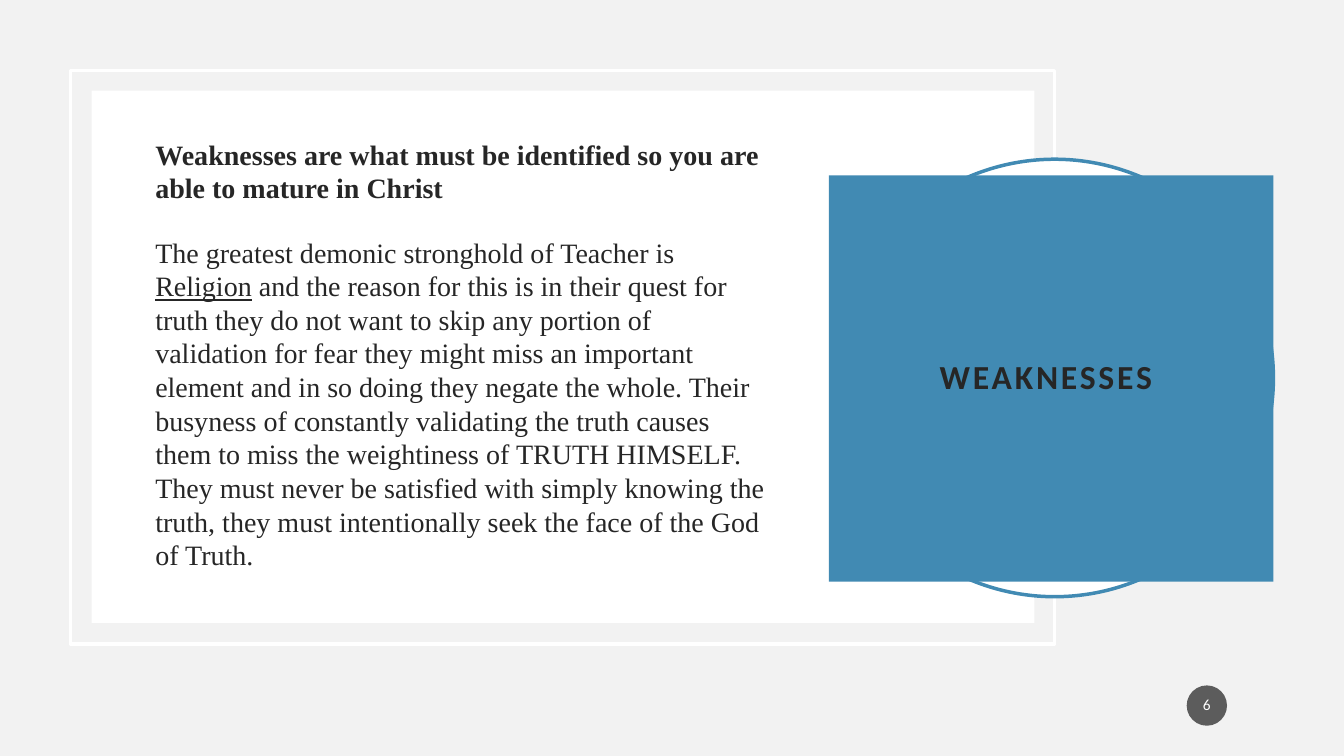
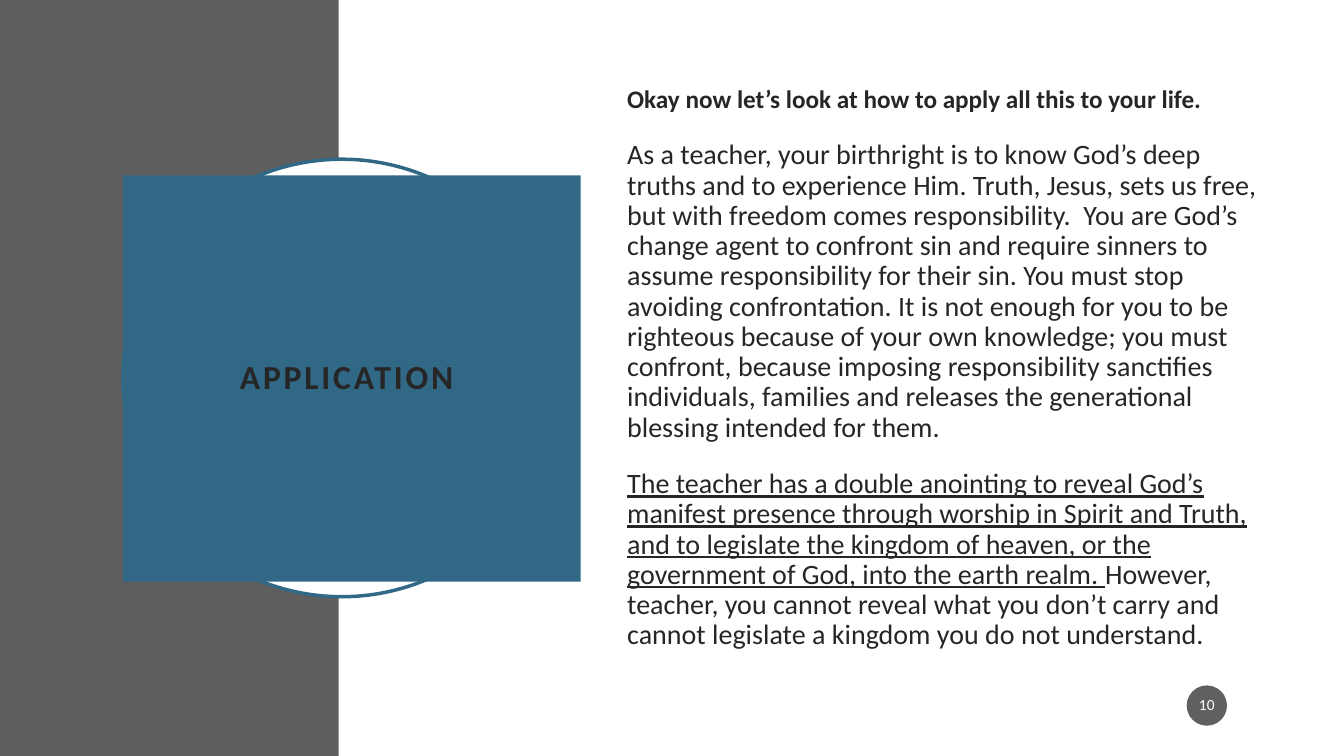
from pptx import Presentation
from pptx.dml.color import RGBColor
from pptx.enum import shapes, text
from pptx.oxml.ns import qn
from pptx.util import Inches, Pt

WHITE = RGBColor(0xFF, 0xFF, 0xFF)
PALE = RGBColor(0xF2, 0xF2, 0xF2)
GREY = RGBColor(0x5E, 0x5E, 0x5E)
DARK = RGBColor(0x1D, 0x1D, 0x1D)
INK = RGBColor(0x26, 0x26, 0x26)
BLUE = RGBColor(0x41, 0x8A, 0xB3)
NAVY = RGBColor(0x31, 0x68, 0x86)
RECT = shapes.MSO_SHAPE.RECTANGLE
OVAL = shapes.MSO_SHAPE.OVAL

# Content: panels are (box, fill, line); paragraphs are (size, runs);
# runs are (words, style), where b is bold and u is underlined
SLIDES = [
    dict(
        title="WEAKNESSES ", page="6", back=PALE, tone=BLUE,
        panels=[((0.7, 0.7, 9.76, 5.69), None, WHITE),
                ((0.91, 0.9, 9.35, 5.28), WHITE, None)],
        ring=8.29, head=(8.22, 1.74, 4.41, 4.03),
        body=(1.44, 1.36, 6.25, 4.52), font="Times New Roman",
        pitch=24, gap=22,
        paras=[
            (20, [("Weaknesses are what must be identified so you are able to "
                   "mature in Christ", "b")]),
            (20, [("The greatest demonic stronghold of Teacher is ", ""),
                  ("Religion", "u"),
                  (" and the reason for this is in their quest for truth they "
                   "do not want to skip any portion of validation for fear "
                   "they might miss an important element and in so doing they "
                   "negate the whole. Their busyness of constantly validating "
                   "the truth causes them to miss the weightiness of TRUTH "
                   "HIMSELF. They must never be satisfied with simply knowing "
                   "the truth, they must intentionally seek the face of the "
                   "God of Truth.", "")]),
        ]),
    dict(
        title="APPLICATION ", page="10", back=WHITE, tone=NAVY,
        panels=[((0, 0, 3.36, 7.5), GREY, None)],
        ring=1.22, head=(1.22, 1.74, 4.54, 4.03),
        body=(6.12, 0.83, 6.53, 5.8), font="Calibri",
        pitch=21.6, gap=18.8,
        paras=[
            (18, [("Okay now let’s look at how to apply all this to your "
                   "life.", "b")]),
            (20, [("As a teacher, your birthright is to know God’s deep truths "
                   "and to experience Him. Truth, Jesus, sets us free, but "
                   "with freedom comes responsibility.  You are God’s change "
                   "agent to confront sin and require sinners to assume "
                   "responsibility for their sin. You must stop avoiding "
                   "confrontation. It is not enough for you to be righteous "
                   "because of your own knowledge; you must confront, because "
                   "imposing responsibility sanctifies individuals, families "
                   "and releases the generational blessing intended for them.",
                   "")]),
            (20, [("The teacher has a double anointing to reveal God’s "
                   "manifest presence through worship in Spirit and Truth, and "
                   "to legislate the kingdom of heaven, or the government of "
                   "God, into the earth realm. ", "u"),
                  ("However, teacher, you cannot reveal what you don’t carry "
                   "and cannot legislate a kingdom you do not understand.",
                   "")]),
        ]),
]


def place(item, box):
    item.left, item.top, item.width, item.height = map(Inches, box)


def panel(page, kind, box, fill=None, line=None):
    item = page.shapes.add_shape(kind, *map(Inches, box))
    item.shadow.inherit = False
    if fill is None:
        item.fill.background()
    else:
        item.fill.solid()
        item.fill.fore_color.rgb = fill
    if line is None:
        item.line.fill.background()
    else:
        item.line.color.rgb = line
        item.line.width = Pt(2.5)
    return item


def setup(frame, anchor, side, top):
    frame.word_wrap = True
    frame.auto_size = text.MSO_AUTO_SIZE.NONE
    frame.vertical_anchor = anchor
    frame.margin_left = frame.margin_right = Inches(side)
    frame.margin_top = frame.margin_bottom = Inches(top)


def style(run, font, size, color, mark=""):
    run.font.name, run.font.size = font, Pt(size)
    run.font.color.rgb = color
    run.font.bold = "b" in mark
    run.font.underline = "u" in mark


def label(item, words, size, color, side, top, mark=""):
    """Write one centred line in the middle of a shape."""
    frame = item.text_frame
    setup(frame, text.MSO_ANCHOR.MIDDLE, side, top)
    frame.text = words
    para = frame.paragraphs[0]
    para.alignment = text.PP_ALIGN.CENTER
    para.line_spacing = 0.9
    style(para.runs[0], "Calibri", size, color, mark)
    return para.runs[0]


def heading(page, data):
    item = page.shapes.title
    page.shapes.element.append(item.element)  # above the ring
    place(item, data["head"])
    item.fill.solid()
    item.fill.fore_color.rgb = data["tone"]
    run = label(item, data["title"], 24, INK, 0.2, 0.2, "b")
    run.font._element.set("spc", "200")


def prose(page, data):
    item = page.placeholders[1]
    page.shapes.element.append(item.element)  # above the panels
    place(item, data["body"])
    frame = item.text_frame
    setup(frame, text.MSO_ANCHOR.TOP, 0.1, 0)
    for i, (size, runs) in enumerate(data["paras"]):
        para = frame.add_paragraph() if i else frame.paragraphs[0]
        para.line_spacing = Pt(data["pitch"])
        para.space_before = Pt(data["gap"] if i else 0)
        props = para._p.get_or_add_pPr()
        props.set("marL", "0")
        props.set("indent", "0")
        props.append(props.makeelement(qn("a:buNone"), {}))
        for words, mark in runs:
            run = para.add_run()
            run.text = words
            style(run, data["font"], size, INK, mark)


def badge(page, number):
    item = panel(page, OVAL, (11.77, 6.8, 0.4, 0.4), DARK)
    tint = item.fill._xPr.find(".//" + qn("a:srgbClr"))
    tint.append(tint.makeelement(qn("a:alpha"), {"val": "70000"}))
    label(item, number, 11, WHITE, 0.02, 0.05)


def build(deck, data):
    page = deck.slides.add_slide(deck.slide_layouts[1])
    page.background.fill.solid()
    page.background.fill.fore_color.rgb = data["back"]
    for box, fill, line in data["panels"]:
        panel(page, RECT, box, fill, line)
    panel(page, OVAL, (data["ring"], 1.58, 4.34, 4.34), WHITE, data["tone"])
    heading(page, data)
    prose(page, data)
    badge(page, data["page"])


def main():
    deck = Presentation()
    deck.slide_width, deck.slide_height = Inches(13.33), Inches(7.5)
    for data in SLIDES:
        build(deck, data)
    deck.save("out.pptx")


if __name__ == "__main__":
    main()
